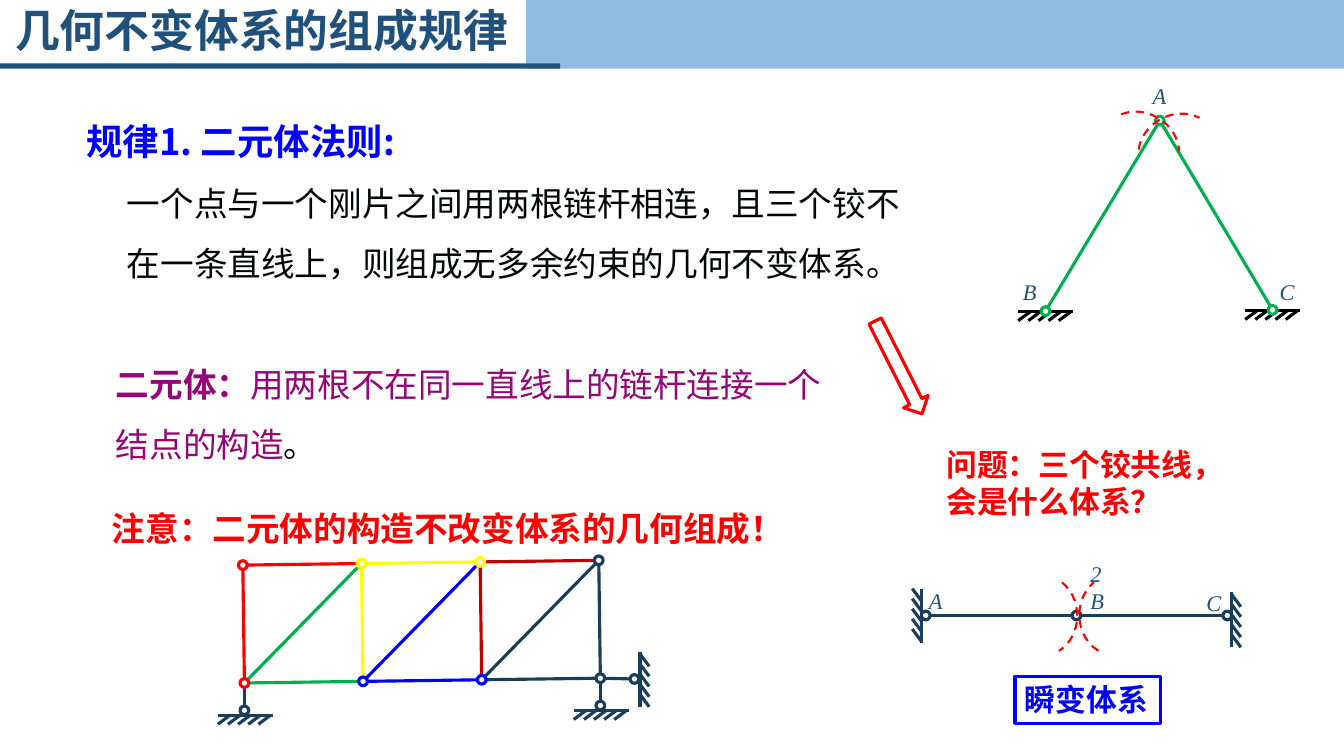
from math import hypot
from lxml.etree import SubElement
from pptx import Presentation
from pptx.dml.color import RGBColor
from pptx.enum.dml import MSO_LINE
from pptx.enum.shapes import MSO_CONNECTOR, MSO_SHAPE
from pptx.enum.text import MSO_ANCHOR, PP_ALIGN
from pptx.oxml.ns import qn
from pptx.util import Cm, Pt

HUES = {"sky": "8EBBE2", "steel": "20517C", "navy": "183D5D", "ink": "020406",
        "blue": "0000FF", "red": "FF0000", "dark": "C00000", "green": "00B050",
        "yellow": "FFFF00", "plum": "950777", "white": "FFFFFF"}
SANS, SERIF = "Noto Sans CJK SC", "Times New Roman"
RAD = 0.11  # hinge radius
SWEEP = (180.59, 38.54)  # arc start and end


def hue(name):
    return RGBColor.from_string(HUES[name])


def shape(slide, kind, x, y, w, h, fill=None, line=None, width=2.25):
    item = slide.shapes.add_shape(kind, Cm(x), Cm(y), Cm(w), Cm(h))
    item.shadow.inherit = False
    if fill:
        item.fill.solid()
        item.fill.fore_color.rgb = hue(fill)
    else:
        item.fill.background()
    if line:
        item.line.color.rgb = hue(line)
        item.line.width = Pt(width)
    else:
        item.line.fill.background()
    return item


def style(para, size, color, bold=False, italic=False, face=SANS):
    para.alignment = PP_ALIGN.LEFT
    font = para.font
    font.size, font.bold, font.italic = Pt(size), bold, italic
    font.color.rgb = hue(color)
    font.name = face
    SubElement(font._element, qn("a:ea")).set("typeface", face)


def text(slide, x, y, w, h, words, size, color, space=1.0, **look):
    box = slide.shapes.add_textbox(Cm(x), Cm(y), Cm(w), Cm(h))
    box.text_frame.word_wrap = True
    para = box.text_frame.paragraphs[0]
    para.text = words
    para.line_spacing = space
    style(para, size, color, **look)
    return box


def label(slide, x, y, words):
    text(slide, x, y, 0.9, 0.94, words, 16, "steel", italic=True, face=SERIF)


def line(slide, start, end, color):
    item = slide.shapes.add_connector(
        MSO_CONNECTOR.STRAIGHT, *(Cm(v) for v in (*start, *end)))
    item.line.color.rgb = hue(color)
    item.line.width = Pt(2.25)
    SubElement(item._element.spPr, qn("a:effectLst"))


def bar(slide, start, end, color):
    """Line between two hinge centres, cut off at the rims."""
    (ax, ay), (bx, by) = start, end
    cut = RAD / hypot(bx - ax, by - ay)
    dx, dy = (bx - ax) * cut, (by - ay) * cut
    line(slide, (ax + dx, ay + dy), (bx - dx, by - dy), color)


def hinge(slide, spot, color):
    x, y = spot
    shape(slide, MSO_SHAPE.OVAL, x - RAD, y - RAD, 2 * RAD, 2 * RAD, "white", color)


def ground(slide, x, y, color, turn=(1, 0)):
    """Hatched support that runs along the unit vector turn."""
    ux, uy = turn

    def spot(along, out):
        return x + along * ux - out * uy, y + along * uy + out * ux

    line(slide, spot(0, 0), spot(1.38, 0), color)
    for i in range(5):
        step = i * 0.255
        line(slide, spot(step, 0.23), spot(step + 0.31, 0), color)


def arc(slide, x, y, turn, sweep=SWEEP):
    item = shape(slide, MSO_SHAPE.ARC, x, y, 1.78, 2.03, line="red", width=1.5)
    item.adjustments[0], item.adjustments[1] = sweep
    item.line.dash_style = MSO_LINE.DASH
    item.rotation = turn


def head(slide, x, y, w):
    shape(slide, MSO_SHAPE.RECTANGLE, x + 13.26, y, w - 13.26, 1.73, "sky")
    shape(slide, MSO_SHAPE.RECTANGLE, x, y + 1.6, 14.12, 0.13, "steel")
    box = text(slide, x + 0.13, y + 0.03, 17.12, 1.6, "几何不变体系的组成规律",
               32, "steel", 0.9, bold=True)
    box.text_frame.vertical_anchor = MSO_ANCHOR.MIDDLE


def rules(slide, x, y):
    # Rule and its statement
    box = text(slide, x, y, 21.41, 4.45, "规律1. 二元体法则:", 26, "blue", bold=True)
    para = box.text_frame.add_paragraph()
    para.text = "一个点与一个刚片之间用两根链杆相连，且三个铰不 在一条直线上，则组成无多余约束的几何不变体系。"
    para.line_spacing = 1.5
    para._p.get_or_add_pPr().set("marL", str(Cm(1.02)))
    style(para, 24, "ink")
    # Definition
    box = text(slide, x + 0.74, y + 5.66, 19.08, 3.18, "", 24, "plum", 1.5)
    para = box.text_frame.paragraphs[0]
    for words in ("二元体：", "用两根不在同一直线上的链杆连接一个结点的构造", "。"):
        para.add_run().text = words
    para.runs[0].font.bold = True
    para.runs[2].font.color.rgb = hue("ink")
    # Remark
    text(slide, x + 0.64, y + 9.3, 16.69, 1.8, "注意：二元体的构造不改变体系的几何组成！",
         24, "red", 1.5, bold=True)


def frame(slide, x, y):
    top, left, right = (x + 3.83, y + 1.14), (x + 0.95, y + 5.94), (x + 6.67, y + 5.91)
    for foot in (left, right):
        ground(slide, foot[0] - 0.69, foot[1] + 0.01, "ink")
        bar(slide, top, foot, "green")
    for spot in (top, left, right):
        hinge(slide, spot, "green")
    for dx, dy, name in ((3.4, 0.05, "A"), (0.13, 4.98, "B"), (6.6, 4.98, "C")):
        label(slide, x + dx, y + dy, name)
    arc(slide, x + 2.44, y + 0.82, 300)
    arc(slide, x + 3.38, y + 0.87, 240)


def truss(slide, x, y):
    top = [(x + 0.72 + 2.99 * i, y + 0.27 - 0.04 * i) for i in range(4)]
    low = [(x + 0.76 + 2.99 * i, y + 3.24 - 0.04 * i) for i in range(4)]
    side = (x + 10.59, y + 3.14)
    # Supports
    for node in (low[0], low[3]):
        foot = (node[0], node[1] + 0.69)
        ground(slide, foot[0] - 0.67, foot[1] + 0.12, "navy")
        bar(slide, node, foot, "navy")
        hinge(slide, foot, "navy")
    ground(slide, side[0] + 0.14, side[1] + 0.7, "navy", (0, -1))
    bar(slide, low[3], side, "navy")
    hinge(slide, side, "navy")
    # Bars: chords, diagonals, posts
    for starts, ends, colors in (
            (low, low[1:], ("green", "blue", "navy")),
            (top, top[1:], ("red", "yellow", "dark")),
            (low, top[1:], ("green", "blue", "navy")),
            (low, top, ("red", "yellow", "dark", "navy"))):
        for start, end, color in zip(starts, ends, colors):
            bar(slide, start, end, color)
    # Hinges
    colors = ("red", "yellow", "yellow", "navy", "red", "blue", "blue", "navy")
    for spot, color in zip(top + low, colors):
        hinge(slide, spot, color)


def query(slide, x, y):
    arrow = shape(slide, MSO_SHAPE.DOWN_ARROW, x, y, 0.69, 2.62, line="red")
    arrow.rotation = 333.2
    text(slide, x + 1.3, y + 3.15, 7.06, 2.13, "问题：三个铰共线，会是什么体系？",
         22, "red", bold=True)


def chain(slide, x, y):
    spots = [(x + 0.33 + 3.8 * i, y + 1.56) for i in range(3)]
    ground(slide, x + 0.22, y + 0.88, "navy", (0, 1))
    ground(slide, x + 8.04, y + 2.36, "navy", (0, -1))
    for start, end in zip(spots, spots[1:]):
        bar(slide, start, end, "navy")
    for spot in spots:
        hinge(slide, spot, "navy")
    arc(slide, x + 2.37, y + 0.55, 0)
    arc(slide, x + 4.2, y + 0.53, 180, (176.53, 34.64))
    for dx, dy, name in ((0.16, 0.72, "A"), (4.23, 0.71, "B"),
                         (7.15, 0.76, "C"), (4.23, 0.05, "2")):
        label(slide, x + dx, y + dy, name)
    # Verdict
    box = text(slide, x + 2.58, y + 3.09, 3.66, 1.19, "瞬变体系", 22, "blue", bold=True)
    box.line.color.rgb = hue("blue")
    box.line.width = Pt(2.25)


def main():
    deck = Presentation()
    deck.slide_width, deck.slide_height = Cm(33.87), Cm(19.05)
    slide = deck.slides.add_slide(deck.slide_layouts[6])
    head(slide, 0, 0, 33.87)
    rules(slide, 1.93, 2.87)
    frame(slide, 25.4, 1.9)
    truss(slide, 5.4, 13.97)
    query(slide, 22.3, 7.95)
    chain(slide, 23, 13.95)
    deck.save("out.pptx")


if __name__ == "__main__":
    main()
